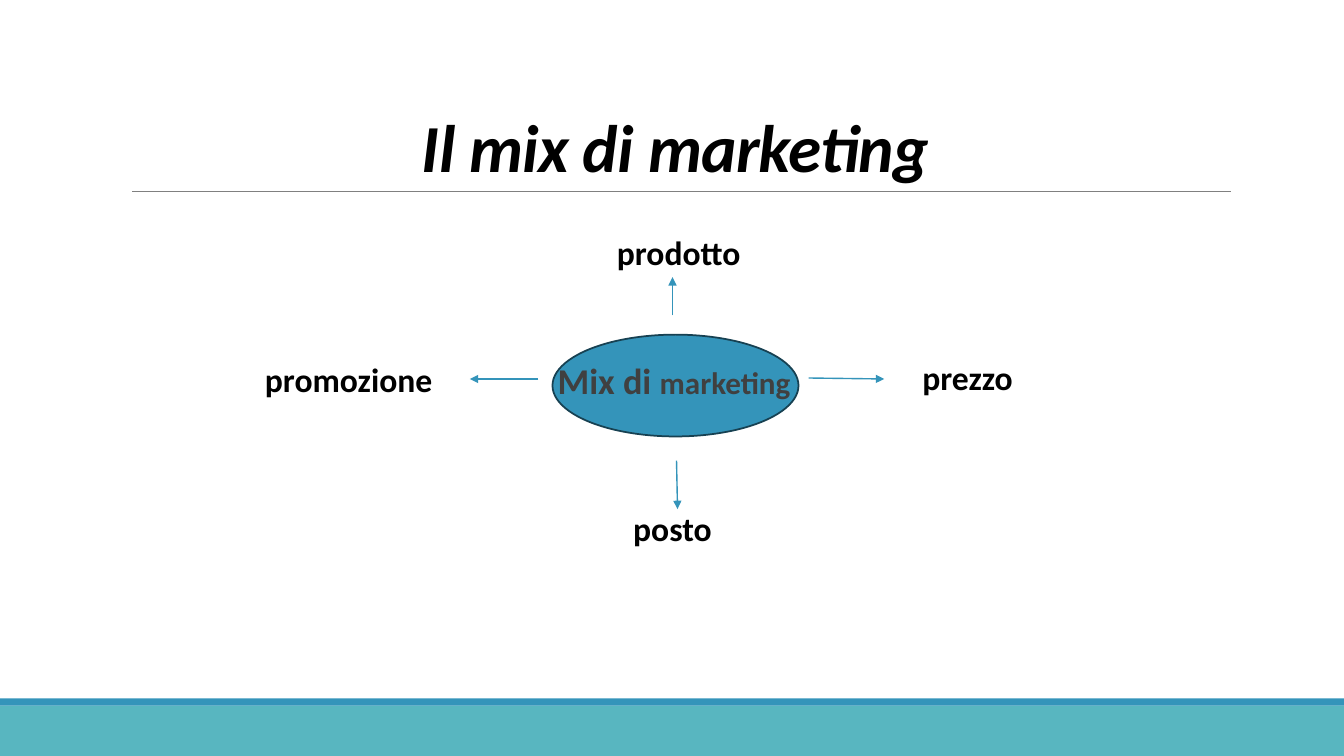
from lxml import etree
from pptx import Presentation
from pptx.dml.color import RGBColor
from pptx.enum.shapes import MSO_CONNECTOR, MSO_SHAPE
from pptx.enum.text import MSO_ANCHOR, MSO_AUTO_SIZE, PP_ALIGN
from pptx.oxml.ns import qn
from pptx.util import Inches, Pt

TEAL = RGBColor(0x58, 0xB6, 0xC0)
BLUE = RGBColor(0x34, 0x94, 0xBA)
NAVY = RGBColor(0x17, 0x41, 0x52)
GREY = RGBColor(0x80, 0x80, 0x80)
DARK = RGBColor(0x40, 0x40, 0x40)
BLACK = RGBColor(0, 0, 0)

SLIDE_W, SLIDE_H = 13.33, 7.5

# label, box (left, top, width, height), alignment, arrow start, arrow end
BRANCHES = [
    ("prodotto", (6.02, 2.25, 2.8, 0.5), PP_ALIGN.LEFT, (6.67, 3.13), (6.67, 2.75)),
    ("prezzo", (9.05, 3.49, 1.55, 0.5), PP_ALIGN.LEFT, (8.02, 3.75), (8.77, 3.76)),
    ("posto", (6.02, 4.99, 1.3, 0.5), PP_ALIGN.CENTER, (6.71, 4.57), (6.72, 5.05)),
    ("promozione", (2.53, 3.51, 2.14, 0.5), PP_ALIGN.LEFT, (5.34, 3.76), (4.66, 3.76)),
]


def inches(values):
    return [Inches(v) for v in values]


def place(sp, box):
    sp.left, sp.top, sp.width, sp.height = inches(box)


def add_run(p, text, size, color, **extra):
    r = p.add_run()
    r.text = text
    style = {"name": "Calibri", "size": Pt(size), "bold": True, **extra}
    for name, value in style.items():
        setattr(r.font, name, value)
    r.font.color.rgb = color
    return r


def add_filled(slide, kind, box, fill, line=None):
    sp = slide.shapes.add_shape(kind, *inches(box))
    sp.shadow.inherit = False
    sp.fill.solid()
    sp.fill.fore_color.rgb = fill
    if line is None:
        sp.line.fill.background()
    else:
        sp.line.color.rgb = line
        sp.line.width = Pt(1.25)


def add_line(slide, start, end, color, width, arrow=False):
    cx = slide.shapes.add_connector(MSO_CONNECTOR.STRAIGHT, *inches(start + end))
    cx.line.color.rgb = color
    cx.line.width = Pt(width)
    if arrow:
        etree.SubElement(cx.line._get_or_add_ln(), qn("a:tailEnd"), type="triangle")
    etree.SubElement(cx._element.spPr, qn("a:effectLst"))


def add_footer_band(slide, box):
    left, top, width, height = box
    stripe = 0.07
    add_filled(slide, MSO_SHAPE.RECTANGLE,
               (left, top + stripe, width, height - stripe), TEAL)
    add_filled(slide, MSO_SHAPE.RECTANGLE, (left, top, width, stripe), BLUE)


def add_title(slide, box):
    """Fill the title and rule a line under its box."""
    left, top, width, height = box
    bottom = top + height
    add_line(slide, (left + 0.11, bottom), (left + width + 0.01, bottom), GREY, 0.5)
    title = slide.shapes.title
    place(title, box)
    tf = title.text_frame
    tf.auto_size = MSO_AUTO_SIZE.NONE
    tf.vertical_anchor = MSO_ANCHOR.BOTTOM
    p = tf.paragraphs[0]
    p.alignment = PP_ALIGN.CENTER
    p.line_spacing = 0.85
    r = add_run(p, "Il mix di marketing", 48, BLACK, italic=True)
    r._r.get_or_add_rPr().set("spc", "-50")


def add_bullet(p, char, color, indent):
    pPr = p._p.get_or_add_pPr()
    pPr.set("marL", str(Inches(indent)))
    pPr.set("indent", str(-Inches(indent)))
    clr = etree.SubElement(pPr, qn("a:buClr"))
    etree.SubElement(clr, qn("a:srgbClr"), val=str(color))
    etree.SubElement(pPr, qn("a:buChar"), char=char)


def add_hub(slide, box):
    """Draw the central ellipse with the body text over it."""
    left, top, width, height = box
    add_filled(slide, MSO_SHAPE.OVAL, box, BLUE, NAVY)
    body = slide.placeholders[1]
    place(body, (left - 0.05, top + 0.23, width + 0.16, 0.78))
    tf = body.text_frame
    tf.auto_size = MSO_AUTO_SIZE.NONE
    tf.margin_left = tf.margin_right = 0
    p = tf.paragraphs[0]
    p.line_spacing = 0.9
    p.space_before = Pt(0)
    p.space_after = Pt(2)
    add_bullet(p, " ", BLUE, 0.1)
    add_run(p, "Mix di ", 25.9, DARK)
    add_run(p, "marketing", 22.2, DARK)
    # The text lies in front of the ellipse
    slide.shapes._spTree.append(body._element)


def add_branch(slide, label, box, align, start, end):
    tf = slide.shapes.add_textbox(*inches(box)).text_frame
    tf.word_wrap = True
    tf.auto_size = MSO_AUTO_SIZE.SHAPE_TO_FIT_TEXT
    p = tf.paragraphs[0]
    p.alignment = align
    add_run(p, label, 24, BLACK)
    add_line(slide, start, end, BLUE, 1, arrow=True)


def main():
    prs = Presentation()
    prs.slide_width, prs.slide_height = inches((SLIDE_W, SLIDE_H))
    slide = prs.slides.add_slide(prs.slide_layouts[1])
    add_footer_band(slide, (0, 6.93, SLIDE_W, 0.57))
    add_title(slide, (1.2, 0.31, 11, 1.59))
    add_hub(slide, (5.48, 3.32, 2.44, 1.01))
    for branch in BRANCHES:
        add_branch(slide, *branch)
    prs.save("out.pptx")


if __name__ == "__main__":
    main()
